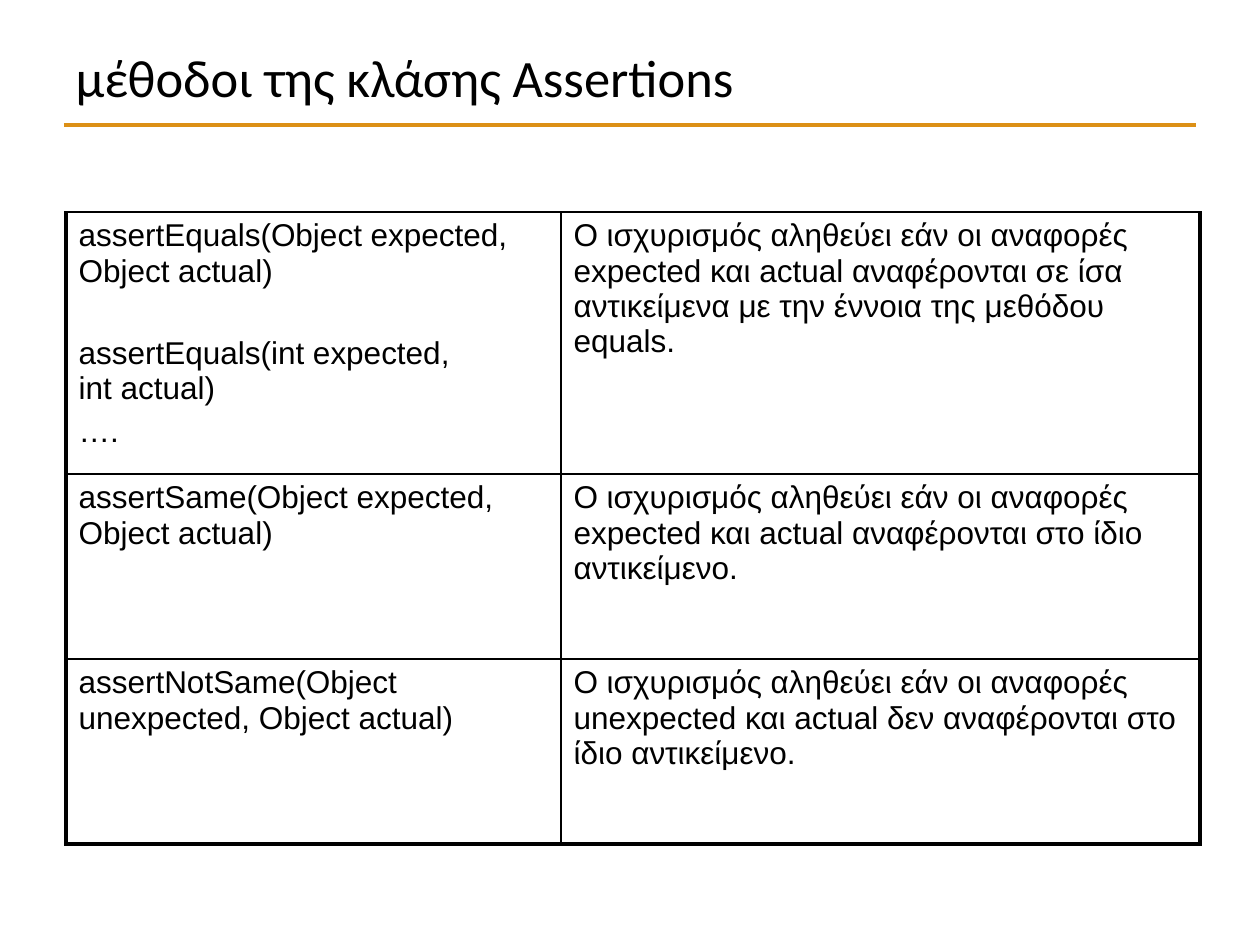
from dataclasses import dataclass

from lxml import etree
from pptx import Presentation
from pptx.dml.color import RGBColor
from pptx.enum.shapes import MSO_CONNECTOR
from pptx.enum.text import MSO_ANCHOR, MSO_AUTO_SIZE, PP_ALIGN
from pptx.oxml.ns import qn
from pptx.util import Emu, Pt

STRAIGHT = MSO_CONNECTOR.STRAIGHT
LEFT = PP_ALIGN.LEFT
MIDDLE = MSO_ANCHOR.MIDDLE
NO_AUTOFIT = MSO_AUTO_SIZE.NONE

PIXELS_PER_INCH = 126
SLIDE_WIDTH, SLIDE_HEIGHT = 1260, 945
BLACK, ORANGE = "000000", "DC9016"
THIN, THICK = 1, 2.25
LINE_GAP, BLOCK_GAP = 4, 27

TABLE_LEFT, TABLE_TOP = 66, 212
COLUMN_WIDTHS = (495, 639)
LINE_BREAK = "\v"


@dataclass(frozen=True)
class Entry:
    text: str
    space_before: float = LINE_GAP


@dataclass(frozen=True)
class MethodRow:
    height: int
    signatures: tuple[Entry, ...]
    meaning: str


METHOD_ROWS = (
    MethodRow(
        262,
        (
            Entry("assertEquals(Object expected, Object actual)"),
            Entry(f"assertEquals(int expected,{LINE_BREAK}int actual)", BLOCK_GAP),
            Entry("…."),
        ),
        "Ο ισχυρισμός αληθεύει εάν οι αναφορές expected και actual "
        "αναφέρονται σε ίσα αντικείμενα με την έννοια της μεθόδου equals.",
    ),
    MethodRow(
        185,
        (Entry("assertSame(Object expected, Object actual)"),),
        "O ισχυρισμός αληθεύει εάν οι αναφορές expected και actual "
        "αναφέρονται στο ίδιο αντικείμενο.",
    ),
    MethodRow(
        185,
        (Entry("assertNotSame(Object unexpected, Object actual)"),),
        "Ο ισχυρισμός αληθεύει εάν οι αναφορές unexpected και actual "
        "δεν αναφέρονται στο ίδιο αντικείμενο.",
    ),
)


def px(length: int) -> Emu:
    return Emu(round(length * 914400 / PIXELS_PER_INCH))


def color(value: str) -> RGBColor:
    return RGBColor.from_string(value)


def write_text(paragraph, text: str, *, font: str, size: float,
               fill: str = BLACK, space_before: float = 0) -> None:
    paragraph.text = text
    paragraph.alignment = LEFT
    paragraph.space_before = Pt(space_before)
    for run in paragraph.runs:
        run.font.name = font
        run.font.size = Pt(size)
        run.font.color.rgb = color(fill)


def add_title(slide, text: str) -> None:
    title = slide.shapes.title
    title.left, title.top = px(63), px(38)
    title.width, title.height = px(1134), px(77)
    frame = title.text_frame
    frame.auto_size = NO_AUTOFIT
    frame.vertical_anchor = MIDDLE
    write_text(frame.paragraphs[0], text, font="Calibri", size=30)


def add_rule(slide, left: int, right: int, y: int) -> None:
    rule = slide.shapes.add_connector(STRAIGHT, px(left), px(y), px(right), px(y))
    rule.line.color.rgb = color(ORANGE)
    rule.line.width = Pt(2.5)
    etree.SubElement(rule._element.spPr, qn("a:effectLst"))


def set_borders(cell, widths: dict[str, float]) -> None:
    """Draw borders keyed by side, in the order L, R, T, B."""
    properties = cell._tc.get_or_add_tcPr()
    for index, (side, width) in enumerate(widths.items()):
        border = etree.Element(qn(f"a:ln{side}"), w=str(Pt(width)))
        fill = etree.SubElement(border, qn("a:solidFill"))
        etree.SubElement(fill, qn("a:srgbClr"), val=BLACK)
        properties.insert(index, border)


def fill_cell(cell, entries: tuple[Entry, ...]) -> None:
    cell.fill.background()
    frame = cell.text_frame
    for index, entry in enumerate(entries):
        paragraph = frame.add_paragraph() if index else frame.paragraphs[0]
        write_text(paragraph, entry.text, font="Arial", size=18,
                   space_before=entry.space_before)


def add_method_table(slide, rows: tuple[MethodRow, ...]) -> None:
    table = slide.shapes.add_table(
        len(rows), len(COLUMN_WIDTHS), px(TABLE_LEFT), px(TABLE_TOP),
        px(sum(COLUMN_WIDTHS)), px(sum(row.height for row in rows)),
    ).table
    table.first_row = table.horz_banding = False
    for column, width in zip(table.columns, COLUMN_WIDTHS):
        column.width = px(width)
    for row_index, row in enumerate(rows):
        table.rows[row_index].height = px(row.height)
        is_last = row_index == len(rows) - 1
        for column_index, entries in enumerate((row.signatures, (Entry(row.meaning),))):
            cell = table.cell(row_index, column_index)
            fill_cell(cell, entries)
            set_borders(cell, {
                "L": THIN if column_index else THICK,
                "R": THICK if column_index else THIN,
                "T": THIN,
                "B": THICK if is_last else THIN,
            })


def main() -> None:
    presentation = Presentation()
    presentation.slide_width = px(SLIDE_WIDTH)
    presentation.slide_height = px(SLIDE_HEIGHT)
    slide = presentation.slides.add_slide(presentation.slide_layouts[5])
    add_rule(slide, 64, 1196, 125)
    add_title(slide, "μέθοδοι της κλάσης Assertions")
    add_method_table(slide, METHOD_ROWS)
    presentation.save("out.pptx")


if __name__ == "__main__":
    main()
